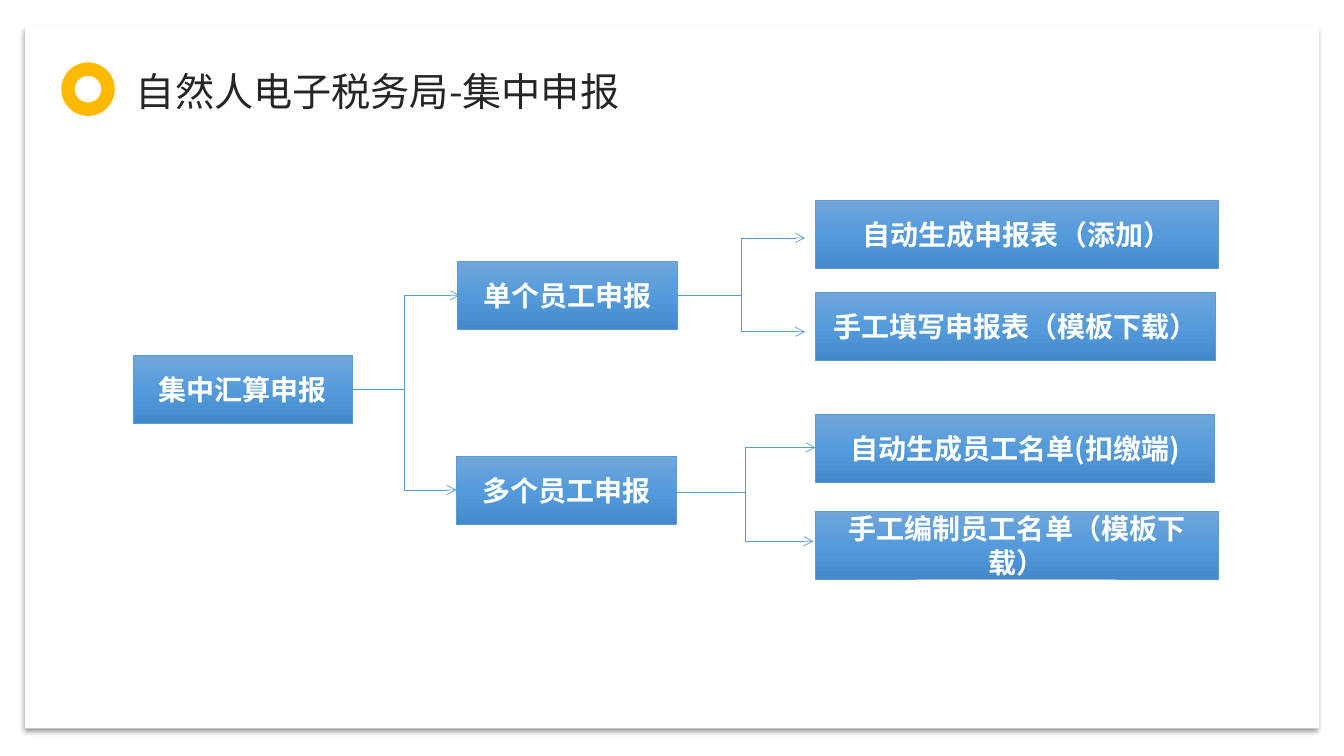
from copy import deepcopy

from lxml import etree
from pptx import Presentation
from pptx import util as u
from pptx.dml.color import RGBColor
from pptx.enum import shapes, text
from pptx.oxml import ns

WHITE, BLUE, AMBER, INK = "FFFFFF", "5B9BD5", "FFBA00", "262626"
BOX_GRADIENT = ["71A6DB", "559BDB", "448ACA"]
BOX_HEIGHT = 48.6

# left, top, width, label
BOXES = [
    (95, 253.6, 157, "集中汇算申报"),
    (327, 186.5, 157, "单个员工申报"),
    (326, 326, 157, "多个员工申报"),
    (582.5, 142.8, 288, "自动生成申报表（添加）"),
    (582.5, 208.8, 286, "手工填写申报表（模板下载）"),
    (582.5, 296, 285, "自动生成员工名单(扣缴端)"),
    (582.5, 365, 288, "手工编制员工名单（模板下载）"),
]

# start x, start y, end x, end y
BRANCHES = [
    (250, 278, 328.3, 211),
    (252, 278, 326, 350),
    (484, 211, 575, 170),
    (484, 211, 575, 237),
    (483, 352, 582.5, 319.7),
    (484, 352, 581, 386.6),
]


def color(value):
    return RGBColor.from_string(value)


def add_xml(parent, tag, **attributes):
    return etree.SubElement(parent, ns.qn(tag), attributes)


class FlowSlide:
    font = "Noto Sans CJK SC"
    line_width = 0.5

    def __init__(self, deck):
        self.shapes = deck.slides.add_slide(deck.slide_layouts[6]).shapes

    def shape(self, kind, left, top, width, height, fill=None):
        """Add a preset shape without outline or shadow."""
        shape = self.shapes.add_shape(kind, *map(u.Pt, (left, top, width, height)))
        shape.shadow.inherit = False
        shape.line.fill.background()
        if fill:
            shape.fill.solid()
            shape.fill.fore_color.rgb = color(fill)
        return shape

    def card(self, left, top, width, height):
        """Add the white page panel with its soft shadow below."""
        card = self.shape(shapes.MSO_SHAPE.RECTANGLE, left, top, width, height, WHITE)
        effects = card._element.spPr.find(ns.qn("a:effectLst"))
        shadow = add_xml(effects, "a:outerShdw", blurRad=str(u.Pt(4)), dist=str(u.Pt(3)),
                         dir="5400000", algn="t", rotWithShape="0")
        black = add_xml(shadow, "a:srgbClr", val="000000")
        add_xml(black, "a:alpha", val="40000")

    def set_text(self, frame, words, size, ink, bold=False):
        frame.word_wrap = True
        para = frame.paragraphs[0]
        para.text = words
        para.font.size = u.Pt(size)
        para.font.bold = bold
        para.font.color.rgb = color(ink)
        para.font.name = self.font
        add_xml(para._p.pPr.find(ns.qn("a:defRPr")), "a:ea", typeface=self.font)
        return para

    def title(self, left, top, width, height, words):
        box = self.shapes.add_textbox(*map(u.Pt, (left, top, width, height)))
        box.text_frame.auto_size = text.MSO_AUTO_SIZE.SHAPE_TO_FIT_TEXT
        self.set_text(box.text_frame, words, 28, INK)

    def box(self, left, top, width, label):
        box = self.shape(shapes.MSO_SHAPE.RECTANGLE, left, top, width, BOX_HEIGHT)
        self.shade(box)
        box.line.color.rgb = color(BLUE)
        box.line.width = u.Pt(self.line_width)
        box.text_frame.vertical_anchor = text.MSO_ANCHOR.MIDDLE
        para = self.set_text(box.text_frame, label, 20, WHITE, bold=True)
        para.alignment = text.PP_ALIGN.CENTER

    def shade(self, box):
        """Fill a box with the three-stop gradient, top to bottom."""
        box.fill.gradient()
        box.fill.gradient_angle = 270
        stops = box._element.spPr.find(".//" + ns.qn("a:gsLst"))
        stops.insert(1, deepcopy(stops[0]))
        for index, (stop, value) in enumerate(zip(box.fill.gradient_stops, BOX_GRADIENT)):
            stop.position = index / 2
            stop.color.rgb = color(value)

    def branch(self, *ends):
        """Add an elbow arrow from one point to another."""
        branch = self.shapes.add_connector(shapes.MSO_CONNECTOR.ELBOW, *map(u.Pt, ends))
        branch.line.color.rgb = color(BLUE)
        branch.line.width = u.Pt(self.line_width)
        properties = branch._element.spPr
        add_xml(properties.find(ns.qn("a:ln")), "a:tailEnd", type="arrow")
        add_xml(properties, "a:effectLst")


def main():
    deck = Presentation()
    deck.slide_width, deck.slide_height = u.Pt(960), u.Pt(540)
    page = FlowSlide(deck)
    page.card(18, 19.4, 924, 501)
    page.shape(shapes.MSO_SHAPE.DONUT, 43.8, 44.6, 38.2, 38.2, AMBER)
    page.title(90, 44.6, 490, 41, "自然人电子税务局-集中申报")
    for box in BOXES:
        page.box(*box)
    for branch in BRANCHES:
        page.branch(*branch)
    deck.save("out.pptx")


if __name__ == "__main__":
    main()
